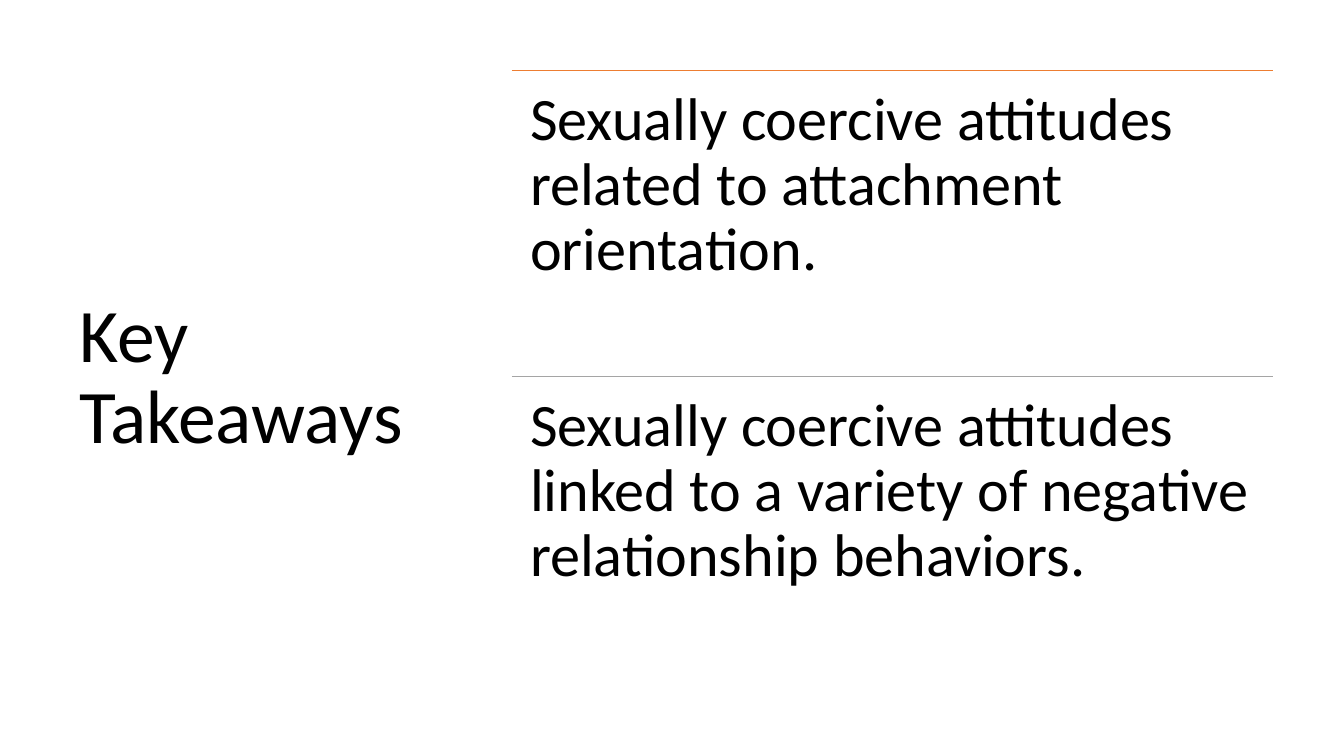
"""Build the Key Takeaways slide: a title beside a ruled list of findings."""
from lxml import etree
from pptx import Presentation
from pptx.dml.color import RGBColor
from pptx.enum import shapes, text
from pptx.oxml import ns
from pptx.util import Cm, Pt

HEADING = "Key Takeaways"
TAKEAWAYS = [
    ("Sexually coercive attitudes related to attachment orientation.", "orange"),
    ("Sexually coercive attitudes linked to a variety of negative relationship behaviors.", "gray"),
]
COLORS = {"ink": "000000", "orange": "ED7D31", "gray": "A5A5A5"}

TOP = 1.78
HEADING_LEFT, HEADING_WIDTH, HEADING_HEIGHT = 1.75, 9.5, 15.52
LIST_LEFT, LIST_WIDTH, ROW_HEIGHT = 12.9, 19.18, 7.7

HEADING_FRAME = {"vertical_anchor": text.MSO_ANCHOR.MIDDLE}
TAKEAWAY_FRAME = {
    f"margin_{side}": Cm(0.46) for side in ("left", "right", "top", "bottom")
}


def add_words(slide, words, box, size, frame_format):
    frame = slide.shapes.add_textbox(*map(Cm, box)).text_frame
    for key, value in {"word_wrap": True, **frame_format}.items():
        setattr(frame, key, value)
    paragraph = frame.paragraphs[0]
    paragraph.text = words
    paragraph.line_spacing = 0.9
    font = paragraph.runs[0].font
    for key, value in {"name": "Calibri", "size": Pt(size)}.items():
        setattr(font, key, value)
    font.color.rgb = RGBColor.from_string(COLORS["ink"])


def add_rule(slide, top, color):
    rule = slide.shapes.add_connector(
        shapes.MSO_CONNECTOR.STRAIGHT,
        Cm(LIST_LEFT), Cm(top), Cm(LIST_LEFT + LIST_WIDTH), Cm(top),
    )
    rule.line.width = Pt(1)
    rule.line.color.rgb = RGBColor.from_string(COLORS[color])
    etree.SubElement(rule._element.spPr, ns.qn("a:effectLst"))


def main():
    deck = Presentation()
    deck.slide_width, deck.slide_height = Cm(33.87), Cm(19.05)
    slide = deck.slides.add_slide(deck.slide_layouts[6])

    heading_box = (HEADING_LEFT, TOP, HEADING_WIDTH, HEADING_HEIGHT)
    add_words(slide, HEADING, heading_box, 54, HEADING_FRAME)

    for row, (takeaway, color) in enumerate(TAKEAWAYS):
        top = TOP + row * ROW_HEIGHT
        add_rule(slide, top, color)
        takeaway_box = (LIST_LEFT, top, LIST_WIDTH, ROW_HEIGHT)
        add_words(slide, takeaway, takeaway_box, 43, TAKEAWAY_FRAME)

    deck.save("out.pptx")


if __name__ == "__main__":
    main()
